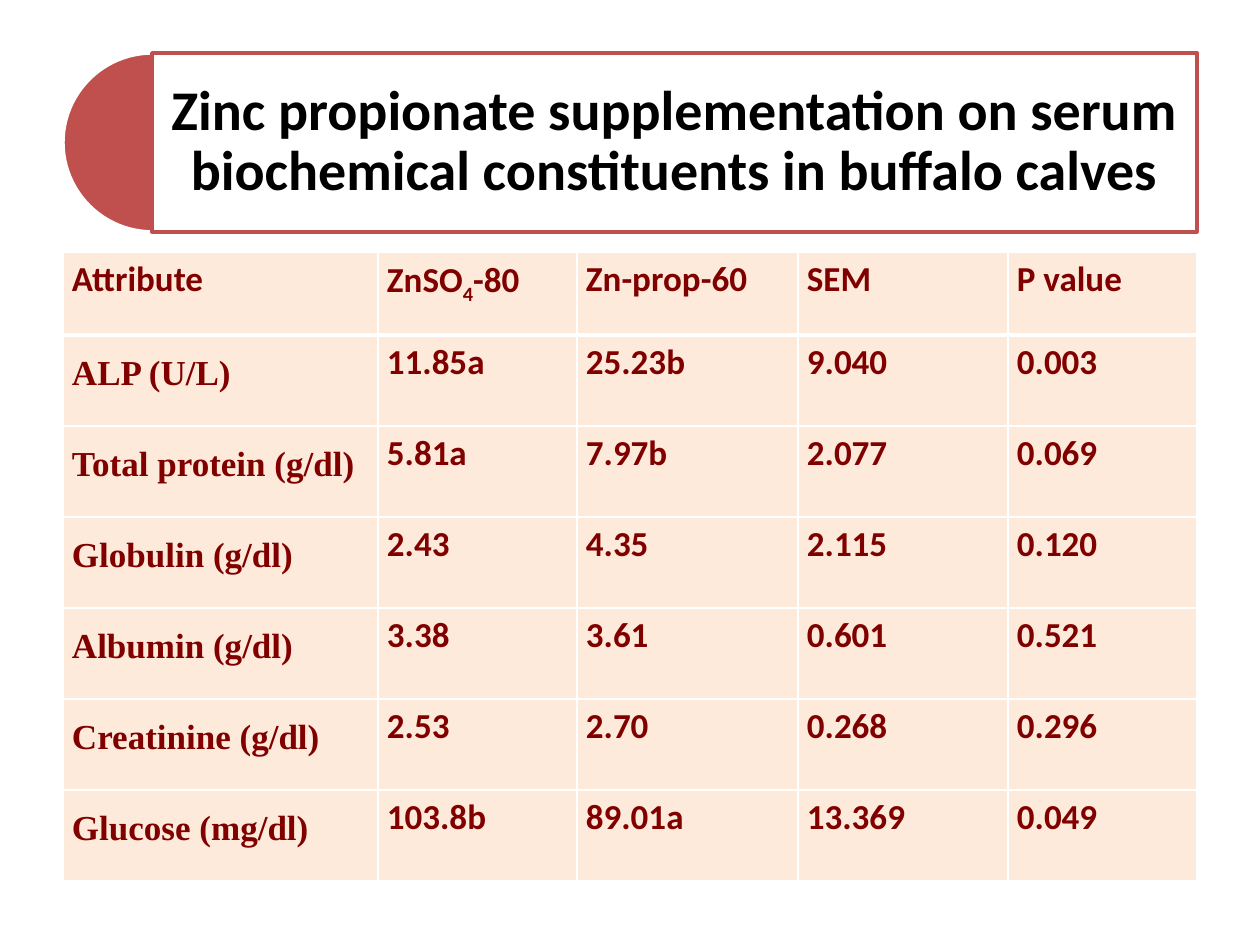
from lxml.etree import SubElement
from pptx import Presentation
from pptx.dml.color import RGBColor
from pptx.enum.shapes import MSO_SHAPE as Shape
from pptx.enum.text import MSO_ANCHOR as Anchor, PP_ALIGN as Align
from pptx.oxml.ns import qn
from pptx.util import Emu, Pt

EMU_PER_PX = 914400 / 126
COLORS = {
    "accent": "C0504D",
    "white": "FFFFFF",
    "title": "000000",
    "cell": "FDEADA",
    "cell_text": "800000",
}
TITLE = ("Zinc propionate supplementation on serum "
         "biochemical constituents in buffalo calves")
# Each header is a list of (text, is_subscript) runs.
HEADERS = [
    [("Attribute", False)],
    [("ZnSO", False), ("4", True), ("-80", False)],
    [("Zn-prop-60", False)],
    [("SEM", False)],
    [("P value", False)],
]
ROWS = [
    ["ALP (U/L)", "11.85a", "25.23b", "9.040", "0.003"],
    ["Total protein (g/dl)", "5.81a", "7.97b", "2.077", "0.069"],
    ["Globulin (g/dl)", "2.43", "4.35", "2.115", "0.120"],
    ["Albumin (g/dl)", "3.38", "3.61", "0.601", "0.521"],
    ["Creatinine (g/dl)", "2.53", "2.70", "0.268", "0.296"],
    ["Glucose (mg/dl)", "103.8b", "89.01a", "13.369", "0.049"],
]
COLUMN_WIDTHS = [315, 199, 221, 210, 189]
HEADER_HEIGHT, ROW_HEIGHT = 83, 91


def px(length):
    return Emu(round(length * EMU_PER_PX))


def color(name):
    return RGBColor.from_string(COLORS[name])


def add_shape(slide, kind, box, fill, line):
    shape = slide.shapes.add_shape(kind, *map(px, box))
    shape.shadow.inherit = False
    shape.fill.solid()
    shape.fill.fore_color.rgb = color(fill)
    shape.line.color.rgb = color(line)
    shape.line.width = Pt(2)
    return shape


def set_opacity(shape, percent):
    fill_color = shape.fill._xPr.find(qn("a:solidFill"))[0]
    SubElement(fill_color, qn("a:alpha"), val=str(percent * 1000))


def add_run(paragraph, text, size, color_name, font_name="Calibri", subscript=False):
    run = paragraph.add_run()
    run.text = text
    font = run.font
    font.name, font.size, font.bold = font_name, Pt(size), True
    font.color.rgb = color(color_name)
    if subscript:
        run._r.get_or_add_rPr().set("baseline", "-25000")


def set_margins(target, horizontal, vertical):
    target.margin_left = target.margin_right = px(horizontal)
    target.margin_top = target.margin_bottom = px(vertical)


def add_title(slide):
    half_disc = add_shape(slide, Shape.PIE, (63, 53, 179, 179), "accent", "white")
    # Angles in 100000ths of a unit, 60000 units to the degree: 90 to 270 degrees.
    half_disc.adjustments[0] = 54
    half_disc.adjustments[1] = 162
    banner = add_shape(slide, Shape.RECTANGLE, (152, 53, 1045, 179), "white", "accent")
    set_opacity(banner, 90)
    frame = banner.text_frame
    frame.word_wrap = True
    frame.vertical_anchor = Anchor.MIDDLE
    set_margins(frame, 16, 16)
    paragraph = frame.paragraphs[0]
    paragraph.alignment = Align.CENTER
    paragraph.line_spacing = 0.9
    add_run(paragraph, TITLE, 32, "title")


def set_borders(cell, top, bottom):
    """Draw white cell borders, with top and bottom widths in points."""
    properties = cell._tc.get_or_add_tcPr()
    for tag, width in (("lnL", 1), ("lnR", 1), ("lnT", top), ("lnB", bottom)):
        line = SubElement(properties, qn(f"a:{tag}"), w=str(Pt(width)))
        fill = SubElement(line, qn("a:solidFill"))
        SubElement(fill, qn("a:srgbClr"), val=COLORS["white"])


def fill_cell(cell, runs, row, font_name="Calibri", line_spacing=1.15):
    set_borders(cell, top=3 if row == 1 else 1, bottom=3 if row == 0 else 1)
    cell.fill.solid()
    cell.fill.fore_color.rgb = color("cell")
    set_margins(cell, 9, 0)
    paragraph = cell.text_frame.paragraphs[0]
    paragraph.line_spacing = line_spacing
    for text, subscript in runs:
        add_run(paragraph, text, 20, "cell_text", font_name, subscript)


def add_serum_table(slide):
    heights = [HEADER_HEIGHT] + [ROW_HEIGHT] * len(ROWS)
    box = (63, 252, sum(COLUMN_WIDTHS), sum(heights))
    table = slide.shapes.add_table(
        len(heights), len(COLUMN_WIDTHS), *map(px, box)).table
    table.horz_banding = False
    for column, width in zip(table.columns, COLUMN_WIDTHS):
        column.width = px(width)
    for table_row, height in zip(table.rows, heights):
        table_row.height = px(height)
    for column, runs in enumerate(HEADERS):
        fill_cell(table.cell(0, column), runs, 0)
    for row, (attribute, *values) in enumerate(ROWS, start=1):
        fill_cell(table.cell(row, 0), [(attribute, False)], row, "Times New Roman", 1.5)
        for column, value in enumerate(values, start=1):
            fill_cell(table.cell(row, column), [(value, False)], row)


def main():
    presentation = Presentation()
    presentation.slide_width, presentation.slide_height = px(1260), px(945)
    slide = presentation.slides.add_slide(presentation.slide_layouts[6])
    add_title(slide)
    add_serum_table(slide)
    presentation.save("out.pptx")


if __name__ == "__main__":
    main()
